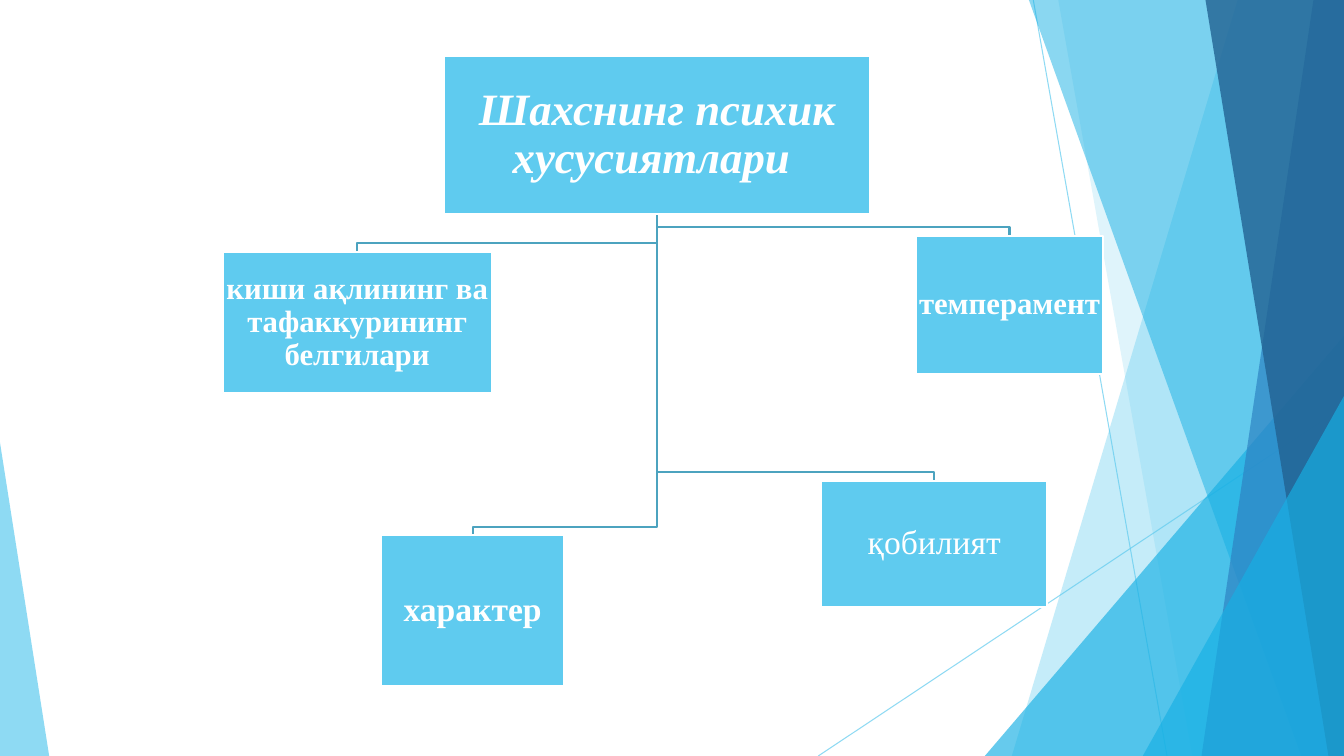
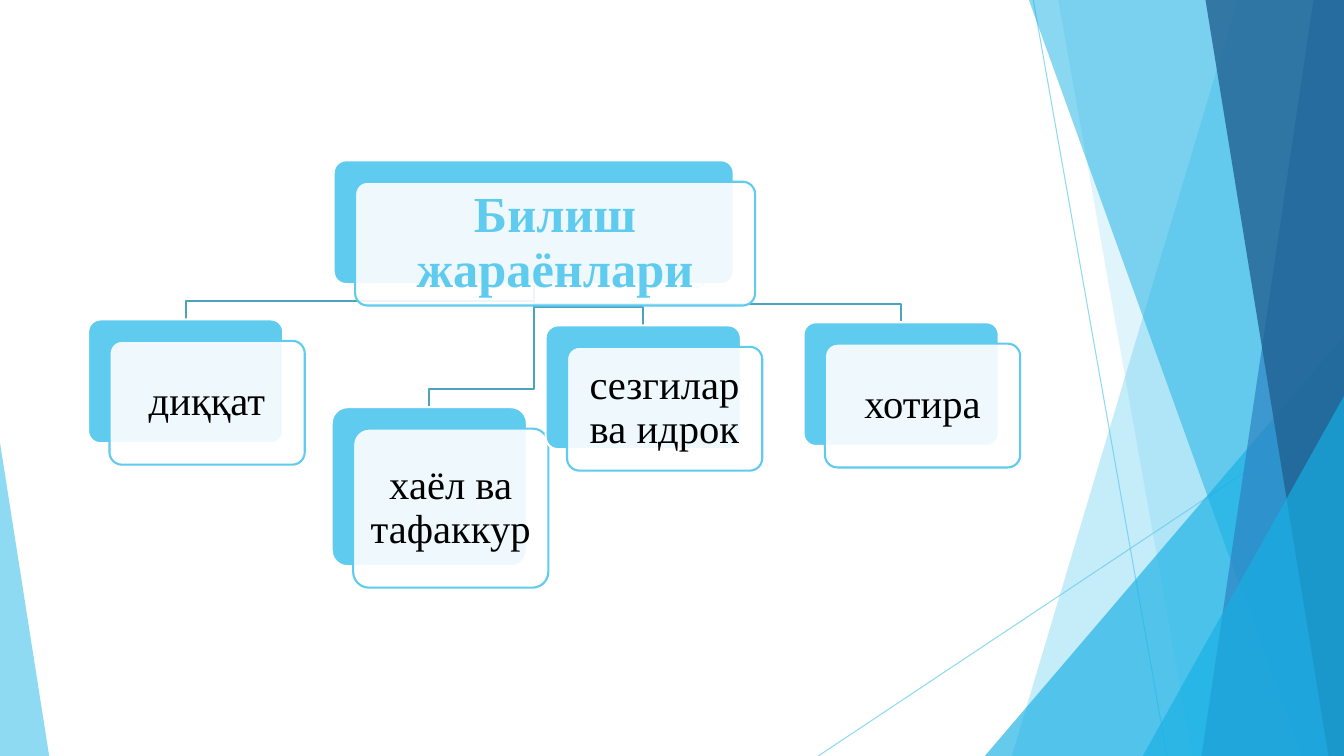
from lxml.etree import SubElement
from pptx import Presentation
from pptx.dml.color import RGBColor
from pptx.enum.shapes import MSO_CONNECTOR, MSO_SHAPE
from pptx.enum.text import MSO_ANCHOR, PP_ALIGN
from pptx.oxml.ns import qn
from pptx.util import Cm, Pt

WIDTH, HEIGHT = 33.87, 19.05
SKY, AZURE, BLUE, NAVY = "5FCBEF", "17B0E4", "2E83C3", "226292"
BRANCH, WHITE, BLACK = "4CA3BF", "FFFFFF", "000000"


def color(value):
    return RGBColor.from_string(value)


def apply(target, values):
    for name, value in values.items():
        setattr(target, name, value)


def set_opacity(shape, parent, percent):
    for fill in shape._element.xpath(f"{parent}/a:solidFill/a:srgbClr"):
        SubElement(fill, qn("a:alpha"), val=str(percent * 1000))


class Deck:
    font = "Times New Roman"
    line_width = 1.5
    card_offset = 0.54

    def __init__(self):
        self.presentation = Presentation()
        self.presentation.slide_width = Cm(WIDTH)
        self.presentation.slide_height = Cm(HEIGHT)
        self.layout = self.presentation.slide_layouts[6]
        self.slide = None

    def add_slide(self):
        self.slide = self.presentation.slides.add_slide(self.layout)

    def style(self, shape, fill=None, line=None, opacity=100):
        shape.shadow.inherit = False
        if fill:
            shape.fill.solid()
            shape.fill.fore_color.rgb = color(fill)
        else:
            shape.fill.background()
        if line:
            shape.line.color.rgb = color(line)
            shape.line.width = Pt(self.line_width)
        else:
            shape.line.fill.background()
        if opacity < 100:
            set_opacity(shape, "p:spPr", opacity)

    def outline(self, points, closed=False, **look):
        points = [(Cm(x), Cm(y)) for x, y in points]
        builder = self.slide.shapes.build_freeform(*points[0])
        builder.add_line_segments(points[1:], close=closed)
        self.style(builder.convert_to_shape(), **look)

    def shape(self, kind, box, adjustment=None, **look):
        shape = self.slide.shapes.add_shape(kind, *map(Cm, box))
        if adjustment is not None:
            shape.adjustments[0] = adjustment
        self.style(shape, **look)
        return shape

    def thin_line(self, start, end):
        line = self.slide.shapes.add_connector(
            MSO_CONNECTOR.STRAIGHT, *map(Cm, start + end))
        line.line.color.rgb = color(SKY)
        line.line.width = Pt(0.75)
        set_opacity(line, "p:spPr/a:ln", 70)
        SubElement(line._element.spPr, qn("a:effectLst"))

    def band(self, top_x, bottom_x, fill, opacity):
        points = [(top_x, 0), (WIDTH, 0), (WIDTH, HEIGHT), (bottom_x, HEIGHT)]
        self.outline(points, closed=True, fill=fill, opacity=opacity)

    def corner(self, left, top, right, apex, fill, opacity):
        box = (left, top, right - left, HEIGHT - top)
        self.shape(MSO_SHAPE.ISOSCELES_TRIANGLE, box, apex,
                   fill=fill, opacity=opacity)

    def backdrop(self):
        self.thin_line((26.04, 0), (29.41, HEIGHT))
        self.thin_line((WIDTH, 10.24), (20.62, HEIGHT))
        self.band(31.19, 25.5, SKY, 36)
        self.band(26.67, 30.05, SKY, 20)
        self.corner(24.82, 8.46, WIDTH, 1, AZURE, 66)
        self.band(25.93, 32.79, AZURE, 50)
        self.band(33.1, 30.28, BLUE, 70)
        self.band(30.38, 33.48, NAVY, 80)
        self.corner(28.8, 9.98, WIDTH, 1, AZURE, 66)
        self.corner(0, 11.15, 1.24, 0, SKY, 70)
        for placeholder in list(self.layout.placeholders):
            placeholder._element.getparent().remove(placeholder._element)
        for shape in list(self.slide.shapes):
            self.layout.shapes._spTree.append(shape._element)

    def label(self, shape, text, margin, ink, size, bold=False, italic=False):
        frame = shape.text_frame
        sides = ("left", "top", "right", "bottom")
        apply(frame, {f"margin_{side}": Cm(margin) for side in sides})
        apply(frame, {"word_wrap": True, "vertical_anchor": MSO_ANCHOR.MIDDLE})
        paragraph = frame.paragraphs[0]
        apply(paragraph, {"alignment": PP_ALIGN.CENTER, "line_spacing": 0.9})
        run = paragraph.add_run()
        run.text = text
        apply(run.font, {"name": self.font, "size": Pt(size),
                         "bold": bold, "italic": italic})
        run.font.color.rgb = color(ink)

    def block(self, box, text, **font):
        shape = self.shape(MSO_SHAPE.RECTANGLE, box, fill=SKY, line=WHITE)
        self.label(shape, text, 0.05, WHITE, **font)

    def card(self, box, text, margin=0.3, ink=BLACK, size=29, **font):
        left, top, width, height = box
        front = (left + self.card_offset, top + self.card_offset, width, height)
        kind = MSO_SHAPE.ROUNDED_RECTANGLE
        self.shape(kind, box, 0.1, fill=SKY, line=WHITE)
        shape = self.shape(kind, front, 0.1, fill=WHITE, line=SKY, opacity=90)
        self.label(shape, text, margin, ink, size, **font)

    def tree(self, draw, nodes, rise):
        left, top, width, height = nodes[0][0]
        root_x, root_bottom = left + width / 2, top + height
        for (left, top, width, height), _, _ in nodes[1:]:
            x, bend = left + width / 2, top - rise
            self.outline([(root_x, root_bottom), (root_x, bend),
                          (x, bend), (x, top)], line=BRANCH)
        for box, text, font in nodes:
            draw(box, text, **font)


def main():
    deck = Deck()
    deck.add_slide()
    deck.backdrop()
    deck.tree(deck.block, [
        ((11.2, 1.4, 10.72, 3.99), "Шахснинг психик хусусиятлари ",
         {"size": 32, "bold": True, "italic": True}),
        ((5.61, 6.35, 6.78, 3.56), "киши ақлининг ва тафаккурининг белгилари",
         {"size": 22, "bold": True}),
        ((9.6, 13.49, 4.62, 3.81), "характер", {"size": 24, "bold": True}),
        ((20.7, 12.12, 5.69, 3.18), "қобилият", {"size": 24}),
        ((23.09, 5.94, 4.7, 3.48), "темперамент", {"size": 22, "bold": True}),
    ], rise=0.22)

    deck.add_slide()
    deck.tree(deck.card, [
        ((8.41, 4.04, 10.08, 3.12), "Билиш жараёнлари",
         {"margin": 0.38, "ink": SKY, "size": 36, "bold": True}),
        ((2.22, 8.05, 4.92, 3.12), "диққат", {}),
        ((8.36, 10.26, 4.92, 4.01), "хаёл ва тафаккур", {}),
        ((13.75, 8.2, 4.92, 3.12), "сезгилар ва идрок", {}),
        ((20.25, 8.12, 4.92, 3.12), "хотира", {}),
    ], rise=0.46)
    deck.presentation.save("out.pptx")


if __name__ == "__main__":
    main()
